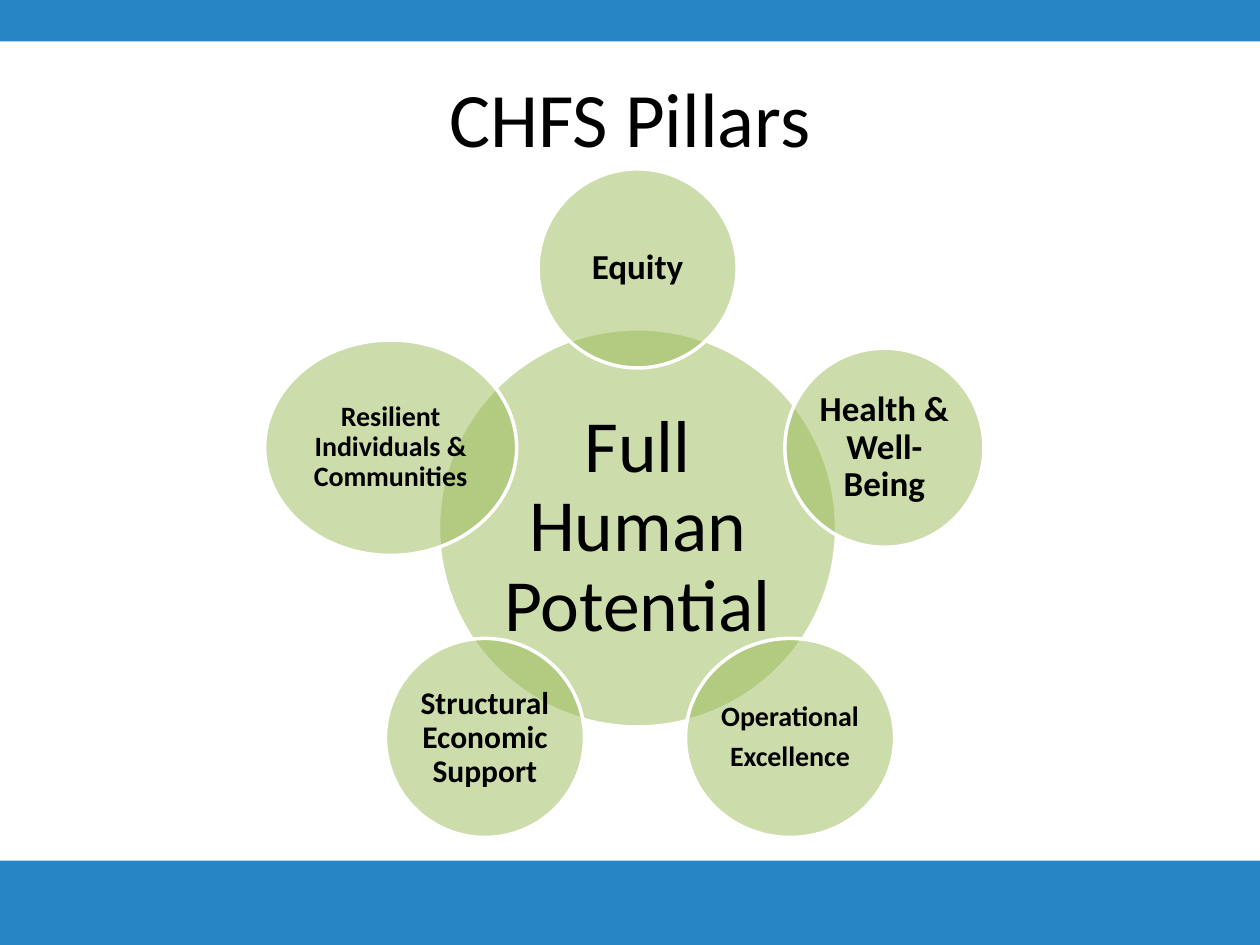
"""Build the CHFS Pillars slide: a hub circle with five circles set around it."""
from math import cos, radians, sin

from lxml import etree
from pptx import Presentation
from pptx.dml.color import RGBColor
from pptx.enum.shapes import MSO_SHAPE
from pptx.enum.text import MSO_ANCHOR, PP_ALIGN
from pptx.oxml.ns import qn
from pptx.util import Inches, Pt

RECT, OVAL = MSO_SHAPE.RECTANGLE, MSO_SHAPE.OVAL
MIDDLE, CENTER = MSO_ANCHOR.MIDDLE, PP_ALIGN.CENTER
BLUE = RGBColor(0x27, 0x84, 0xC5)
GREEN = RGBColor(0x9B, 0xBB, 0x59)
WHITE = RGBColor(0xFF, 0xFF, 0xFF)
BLACK = RGBColor(0x00, 0x00, 0x00)

WIDTH, HEIGHT = 10, 7.5
BARS = [(0, 0.33), (6.83, 0.67)]
TITLE = "CHFS Pillars"
TITLE_BOX = (0.5, 0.3, 9, 1.25)
HUB_X, HUB_Y, ORBIT = 5.06, 4.19, 2.06
HUB = (["Full Human Potential"], 3.16, 3.16, 42, 0)
PILLARS = [
    (["Equity"], 1.58, 1.58, 20, 0.03),
    (["Health & Well-Being"], 1.58, 1.58, 20, 0.03),
    (["Operational ", "Excellence"], 1.66, 1.58, 16, 0.02),
    (["Structural Economic Support"], 1.58, 1.58, 18, 0.03),
    (["Resilient Individuals & Communities"], 2, 1.71, 16, 0.02),
]


def apply(obj, values):
    for name, value in values.items():
        setattr(obj, name, value)


def write(tf, lines, size, bold, inset, spacing=1.0):
    apply(tf, dict(word_wrap=True, vertical_anchor=MIDDLE))
    apply(tf, {f"margin_{side}": Inches(inset) for side in ("left", "top", "right", "bottom")})
    for i, line in enumerate(lines):
        p = tf.add_paragraph() if i else tf.paragraphs[0]
        apply(p, dict(alignment=CENTER, line_spacing=spacing))
        if i:
            p.space_before = Pt(round(size * 0.35, 1))
        r = p.add_run()
        r.text = line
        apply(r.font, dict(name="Calibri", size=Pt(size), bold=bold))
        r.font.color.rgb = BLACK


def add_filled(s, kind, box, color):
    sp = s.shapes.add_shape(kind, *map(Inches, box))
    sp.shadow.inherit = False
    sp.fill.solid()
    sp.fill.fore_color.rgb = color
    return sp


def add_circle(s, x, y, circle, bold):
    lines, w, h, size, inset = circle
    sp = add_filled(s, OVAL, (x - w / 2, y - h / 2, w, h), GREEN)
    color = sp.fill._xPr.find(qn("a:solidFill"))[0]
    etree.SubElement(color, qn("a:alpha"), val="50000")
    sp.line.color.rgb = WHITE
    sp.line.width = Pt(2)
    write(sp.text_frame, lines, size, bold, inset, 0.9)


def main():
    prs = Presentation()
    apply(prs, dict(slide_width=Inches(WIDTH), slide_height=Inches(HEIGHT)))
    s = prs.slides.add_slide(prs.slide_layouts[5])
    for top, height in BARS:
        add_filled(s, RECT, (0, top, WIDTH, height), BLUE).line.fill.background()

    title = s.shapes.title
    apply(title, dict(zip(("left", "top", "width", "height"), map(Inches, TITLE_BOX))))
    write(title.text_frame, [TITLE], 44, False, 0.05)

    add_circle(s, HUB_X, HUB_Y, HUB, False)
    for i, pillar in enumerate(PILLARS):
        angle = radians(360 / len(PILLARS) * i - 90)
        add_circle(s, HUB_X + ORBIT * cos(angle), HUB_Y + ORBIT * sin(angle), pillar, True)
    prs.save("out.pptx")


if __name__ == "__main__":
    main()
